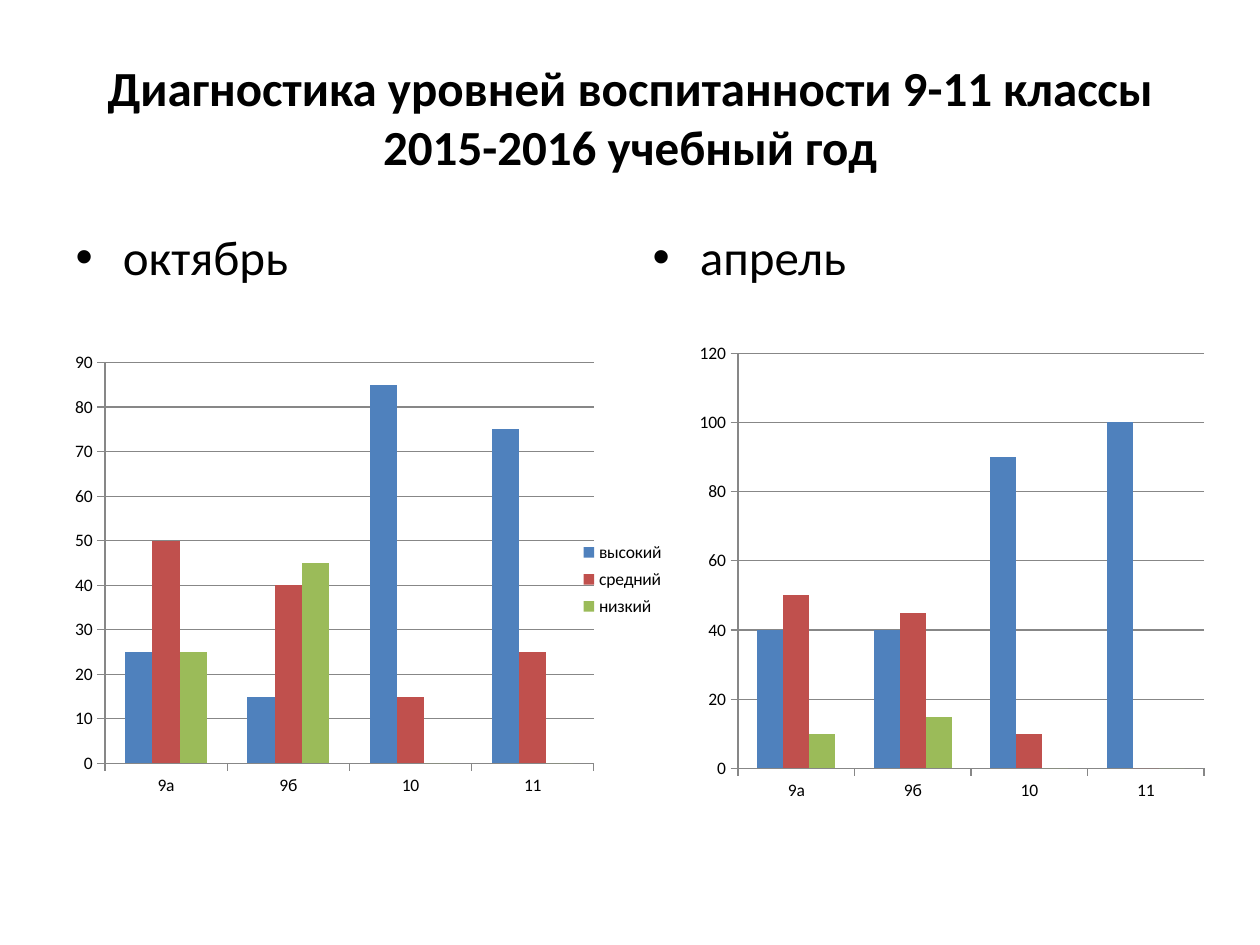
import lxml.etree
import pptx
import pptx.chart.data
import pptx.dml.color
import pptx.enum.chart
import pptx.enum.text
import pptx.oxml.ns
import pptx.util

RGBColor = pptx.dml.color.RGBColor
BLACK = RGBColor(0x00, 0x00, 0x00)
GRAY = RGBColor(0x87, 0x87, 0x87)
LEVEL_COLORS = {
    "высокий": RGBColor(0x4F, 0x81, 0xBD),
    "средний": RGBColor(0xC0, 0x50, 0x4D),
    "низкий": RGBColor(0x9B, 0xBB, 0x59),
}
CLASSES = ["9а", "9б", "10", "11"]
OCTOBER = [[25, 15, 85, 75], [50, 40, 15, 25], [25, 45, 0, 0]]
APRIL = [[40, 40, 90, 100], [50, 45, 10, 0], [10, 15, 0, 0]]
FONT = "Calibri"
MARGIN, COLUMN_W, GUTTER = 0.5, 4.42, 0.16


def place(sp, left, top, width, height):
    sp.left, sp.top, sp.width, sp.height = map(
        pptx.util.Inches, (left, top, width, height))


def style_font(font, size, bold=False):
    font.name = FONT
    font.size = pptx.util.Pt(size)
    font.bold = bold
    font.color.rgb = BLACK


def add_run(p, text, bold=False):
    r = p.add_run()
    r.text = text
    style_font(r.font, 28, bold)


def fill_title(sp, lines):
    place(sp, MARGIN, 0.3, 10 - 2 * MARGIN, 1.25)
    sp.text_frame.vertical_anchor = pptx.enum.text.MSO_ANCHOR.MIDDLE
    p = sp.text_frame.paragraphs[0]
    p.alignment = pptx.enum.text.PP_ALIGN.CENTER
    for i, line in enumerate(lines):
        if i:
            p.add_line_break()
        add_run(p, line, bold=True)


def fill_month(sp, column, month):
    place(sp, MARGIN + column * (COLUMN_W + GUTTER), 1.75, COLUMN_W, 4.95)
    add_run(sp.text_frame.paragraphs[0], month)


def set_layout(parent, index, x, y, w, h, inner=False):
    """Place a chart part by shares of the chart's size."""
    qn = pptx.oxml.ns.qn
    for old in parent.findall(qn("c:layout")):
        parent.remove(old)
    layout = lxml.etree.Element(qn("c:layout"))
    manual = lxml.etree.SubElement(layout, qn("c:manualLayout"))
    values = {"xMode": "edge", "yMode": "edge", "x": x, "y": y, "w": w, "h": h}
    if inner:
        values = {"layoutTarget": "inner", **values}
    for tag, value in values.items():
        lxml.etree.SubElement(manual, qn("c:" + tag)).set("val", str(value))
    parent.insert(index, layout)


def style_axis(axis):
    axis.major_tick_mark = pptx.enum.chart.XL_TICK_MARK.OUTSIDE
    axis.minor_tick_mark = pptx.enum.chart.XL_TICK_MARK.NONE
    axis.format.line.color.rgb = GRAY


def add_level_chart(slide, box, rows):
    data = pptx.chart.data.CategoryChartData()
    data.categories = CLASSES
    for level, values in zip(LEVEL_COLORS, rows):
        data.add_series(level, values)
    chart = slide.shapes.add_chart(
        pptx.enum.chart.XL_CHART_TYPE.COLUMN_CLUSTERED,
        *map(pptx.util.Inches, box), data).chart
    style_font(chart.font, 10)
    chart.has_title = False
    chart.has_legend = False
    style_axis(chart.category_axis)
    style_axis(chart.value_axis)
    chart.value_axis.has_major_gridlines = True
    chart.value_axis.major_gridlines.format.line.color.rgb = GRAY
    plot = chart.plots[0]
    plot.gap_width, plot.overlap, plot.vary_by_categories = 150, 0, False
    for series, color in zip(plot.series, LEVEL_COLORS.values()):
        series.format.fill.solid()
        series.format.fill.fore_color.rgb = color
    return chart


def add_legend(chart):
    chart.has_legend = True
    chart.legend.position = pptx.enum.chart.XL_LEGEND_POSITION.RIGHT
    chart.legend.include_in_layout = False
    legend = chart.legend._element
    set_layout(legend, 1, 0.82, 0.41, 0.15, 0.19)
    set_layout(legend.getparent().find(pptx.oxml.ns.qn("c:plotArea")), 0,
               0.08, 0.04, 0.77, 0.86, inner=True)


def main():
    prs = pptx.Presentation()
    prs.slide_width = pptx.util.Inches(10)
    prs.slide_height = pptx.util.Inches(7.5)
    slide = prs.slides.add_slide(prs.slide_layouts.get_by_name("Two Content"))
    title, *bodies = list(slide.placeholders)[:3]
    fill_title(title, ["Диагностика уровней воспитанности 9-11 классы",
                       "2015-2016 учебный год"])
    for column, month in enumerate(["октябрь", "апрель"]):
        fill_month(bodies[column], column, month)
    add_legend(add_level_chart(slide, (0.43, 2.73, 5.04, 3.7), OCTOBER))
    add_level_chart(slide, (5.47, 2.65, 4.17, 3.78), APRIL)
    prs.save("out.pptx")


if __name__ == "__main__":
    main()
